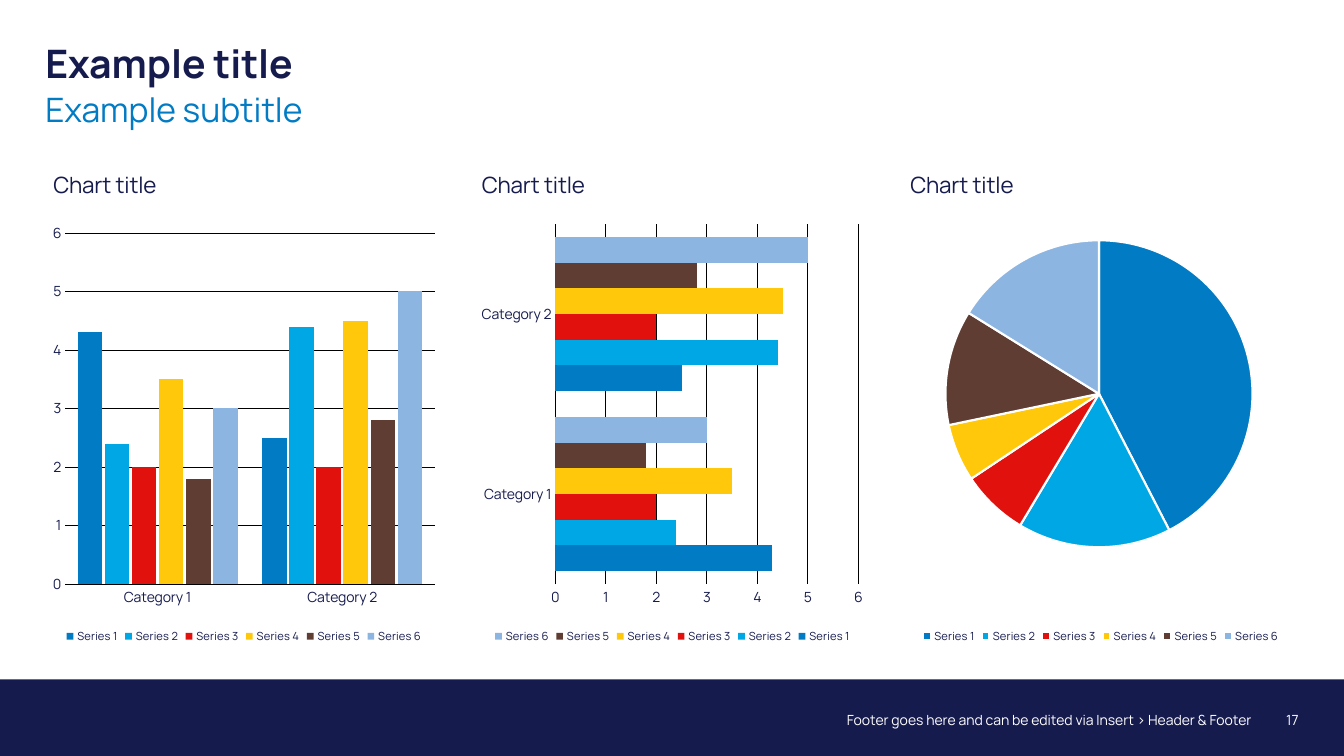
"""Build a slide with a column, a bar and a pie chart above a footer band."""
from lxml import etree
from pptx import Presentation
from pptx import util as u
from pptx.chart.data import CategoryChartData
from pptx.dml.color import RGBColor
from pptx.enum import chart as ch, shapes, text
from pptx.oxml.ns import qn

FONT, NAVY, BLUE, WHITE, BLACK = "Manrope", "161B4E", "007BC4", "FFFFFF", "000000"
COLORS = [BLUE, "00A7E5", "E1120E", "FFC80A", "603D33", "8CB5E2"]
NAMES = [f"Series {n}" for n in range(1, 7)]
CATS = ["Category 1", "Category 2"]
ROWS = [(4.3, 2.5), (2.4, 4.4), (2, 2), (3.5, 4.5), (1.8, 2.8), (3, 5)]
SHARES = [42, 16, 7, 6, 12, 16]
BARS = list(zip(NAMES, ROWS))
KIND = ch.XL_CHART_TYPE
CHARTS = [
    (KIND.COLUMN_CLUSTERED, CATS, BARS, (0.05, 0.156, 0.93, 0.714)),
    (KIND.BAR_CLUSTERED, CATS, BARS, (0.205, 0.138, 0.763, 0.732)),
    (KIND.PIE, NAMES, [("Series 1", SHARES)], (0.108, 0.171, 0.774, 0.624)),
]
LEFT, RIGHT, MID = text.PP_ALIGN.LEFT, text.PP_ALIGN.RIGHT, text.MSO_ANCHOR.MIDDLE
TOP = text.MSO_ANCHOR.TOP
FOOT = "Footer goes here and can be edited via Insert > Header & Footer"
TEXTS = [
    ("Example title", (0.45, 0.44, 12.44, 0.43), 28, NAVY, True, LEFT, TOP, 0.9),
    ("Example subtitle", (0.45, 0.88, 12.44, 0.43), 24, BLUE, False, LEFT, TOP, 1),
    (FOOT, (6.67, 7.03, 5.74, 0.23), 10, WHITE, False, RIGHT, MID, 1),
    ("17", (12.42, 7.03, 0.46, 0.23), 10, WHITE, False, RIGHT, MID, 1),
]


def paint(color, code):
    color.rgb = RGBColor.from_string(code)


def fill(part, code):
    part.fill.solid()
    paint(part.fill.fore_color, code)


def style(font, size, code, bold=False):
    font.name, font.size, font.bold = FONT, u.Pt(size), bold
    paint(font.color, code)


def rule(line, code, width):
    paint(line.color, code)
    line.width = u.Pt(width)


def place(node, index, spots):
    for old in node.findall(qn("c:layout")):
        node.remove(old)
    layout = etree.Element(qn("c:layout"))
    manual = etree.SubElement(layout, qn("c:manualLayout"))
    for tag, val in spots:
        etree.SubElement(manual, qn("c:" + tag)).set("val", str(val))
    node.insert(index, layout)


def write(slide, words, at, size, code, bold, align, anchor, space):
    frame = slide.shapes.add_textbox(*map(u.Inches, at)).text_frame
    frame.margin_left = frame.margin_right = 0
    frame.margin_top = frame.margin_bottom = 0
    frame.word_wrap, frame.vertical_anchor = True, anchor
    frame.text = words
    para = frame.paragraphs[0]
    para.alignment, para.line_spacing = align, space
    style(para.runs[0].font, size, code, bold)


def set_axes(chart):
    cat, val = chart.category_axis, chart.value_axis
    for axis in (cat, val):
        axis.major_tick_mark = axis.minor_tick_mark = ch.XL_TICK_MARK.NONE
        style(axis.tick_labels.font, 10, NAVY)
    rule(cat.format.line, BLACK, 0.75)
    val.format.line.fill.background()
    val.has_major_gridlines = True
    rule(val.major_gridlines.format.line, BLACK, 0.5)
    val.minimum_scale, val.maximum_scale, val.major_unit = 0, 6, 1


def draw(slide, kind, cats, rows, box, left):
    data = CategoryChartData()
    data.categories = cats
    for name, vals in rows:
        data.add_series(name, vals)
    at = map(u.Inches, (left, 1.55, 3.94, 4.88))
    chart = slide.shapes.add_chart(kind, *at, data).chart
    style(chart.font, 10, BLACK)
    chart.has_title = True
    title = chart.chart_title
    title.include_in_layout = False
    title.text_frame.text = "Chart title"
    style(title.text_frame.paragraphs[0].runs[0].font, 16, NAVY)
    edge = [("xMode", "edge"), ("yMode", "edge")]
    place(title._element, 1, edge + [("x", 0.01), ("y", 0.015)])
    area = chart._chartSpace.chart.plotArea
    place(area, 0, [("layoutTarget", "inner")] + edge + list(zip("xywh", box)))
    chart.has_legend = True
    chart.legend.position = ch.XL_LEGEND_POSITION.BOTTOM
    chart.legend.include_in_layout = False
    style(chart.legend.font, 8, NAVY)
    plot = chart.plots[0]
    if kind == KIND.PIE:
        plot.vary_by_categories = True
        parts = [plot.series[0].points[n] for n in range(len(cats))]
        for part in parts:
            rule(part.format.line, WHITE, 1.5)
    else:
        plot.vary_by_categories = False
        plot.gap_width = 100
        plot.overlap = -10 if kind == KIND.COLUMN_CLUSTERED else 0
        set_axes(chart)
        parts = plot.series
    for part, code in zip(parts, COLORS):
        fill(part.format, code)


def main():
    deck = Presentation()
    deck.slide_width, deck.slide_height = u.Inches(13.33), u.Inches(7.5)
    slide = deck.slides.add_slide(deck.slide_layouts[6])
    at = map(u.Inches, (0, 6.74, 13.33, 0.76))
    band = slide.shapes.add_shape(shapes.MSO_SHAPE.RECTANGLE, *at)
    band.shadow.inherit = False
    fill(band, NAVY)
    band.line.fill.background()
    for item in TEXTS:
        write(slide, *item)
    for n, item in enumerate(CHARTS):
        draw(slide, *item, 0.45 + 4.25 * n)
    deck.save("out.pptx")


if __name__ == "__main__":
    main()
